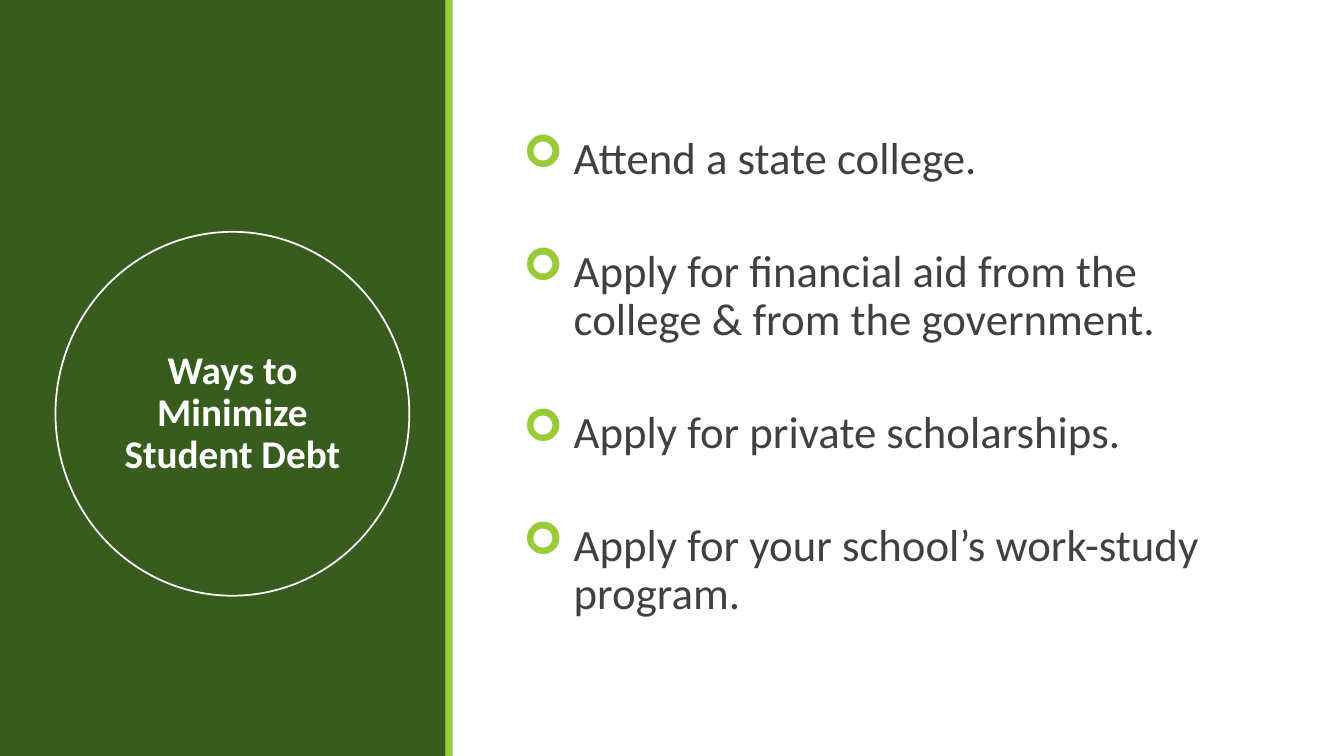
"""Build a slide listing ways to minimize student debt."""
from lxml import etree
from pptx import Presentation
from pptx import util as u
from pptx.dml.color import RGBColor
from pptx.enum import shapes, text
from pptx.oxml.ns import qn

DARK_GREEN = RGBColor(0x37, 0x5C, 0x1E)
LIME = RGBColor(0x99, 0xCB, 0x38)
WHITE = RGBColor(0xFF, 0xFF, 0xFF)
GRAY = RGBColor(0x40, 0x40, 0x40)
FONT = "Calibri"
WIDTH, HEIGHT = u.Inches(13.33), u.Inches(7.5)
PANEL_WIDTH = u.Inches(4.42)
HANGING = u.Inches(0.5)

WAYS = [
    "Attend a state college.",
    "Apply for financial aid from the college & from the government.",
    "Apply for private scholarships.",
    "Apply for your school’s work-study program.",
]


def add_solid(kind, left, top, width, height, color):
    solid = slide.shapes.add_shape(kind, left, top, width, height)
    solid.shadow.inherit = False
    solid.fill.solid()
    solid.fill.fore_color.rgb = color
    solid.line.fill.background()
    return solid


def add_words(paragraph, words, size, color, bold=False):
    paragraph.line_spacing = 0.9
    run = paragraph.add_run()
    run.text = words
    run.font.name = FONT
    run.font.size = u.Pt(size)
    run.font.bold = bold
    run.font.color.rgb = color


deck = Presentation()
deck.slide_width, deck.slide_height = WIDTH, HEIGHT
slide = deck.slides.add_slide(deck.slide_layouts[6])
slide.background.fill.solid()
slide.background.fill.fore_color.rgb = WHITE

RECTANGLE = shapes.MSO_SHAPE.RECTANGLE
add_solid(RECTANGLE, 0, 0, PANEL_WIDTH, HEIGHT, DARK_GREEN)
add_solid(RECTANGLE, PANEL_WIDTH, 0, u.Inches(0.07), HEIGHT, LIME)

ways = slide.shapes.add_textbox(u.Inches(5.19), u.Inches(0.66), u.Inches(7.01), u.Inches(6.17))
ways_frame = ways.text_frame
ways_frame.word_wrap = True
ways_frame.vertical_anchor = text.MSO_ANCHOR.MIDDLE
ways_frame.margin_left = ways_frame.margin_right = 0

for index, way in enumerate(WAYS):
    item = ways_frame.add_paragraph() if index else ways_frame.paragraphs[0]
    add_words(item, way, 32, GRAY)
    item.space_before = u.Pt(46 if index else 0)
    properties = item._p.get_or_add_pPr()
    properties.set("marL", str(HANGING))
    properties.set("indent", str(-HANGING))
    bullet_color = etree.SubElement(properties, qn("a:buClr"))
    etree.SubElement(bullet_color, qn("a:srgbClr"), val=str(LIME))
    etree.SubElement(properties, qn("a:buFont"), typeface="Wingdings")
    etree.SubElement(properties, qn("a:buChar"), char="➢")

topic = add_solid(shapes.MSO_SHAPE.OVAL, u.Inches(0.55), u.Inches(2.3),
                  u.Inches(3.51), u.Inches(3.61), DARK_GREEN)
topic.line.color.rgb = WHITE
topic.line.width = u.Pt(1.25)
topic_frame = topic.text_frame
topic_frame.word_wrap = True
topic_frame.vertical_anchor = text.MSO_ANCHOR.MIDDLE
topic_title = topic_frame.paragraphs[0]
topic_title.alignment = text.PP_ALIGN.CENTER
add_words(topic_title, "Ways to Minimize Student Debt", 28, WHITE, bold=True)

deck.save("out.pptx")
